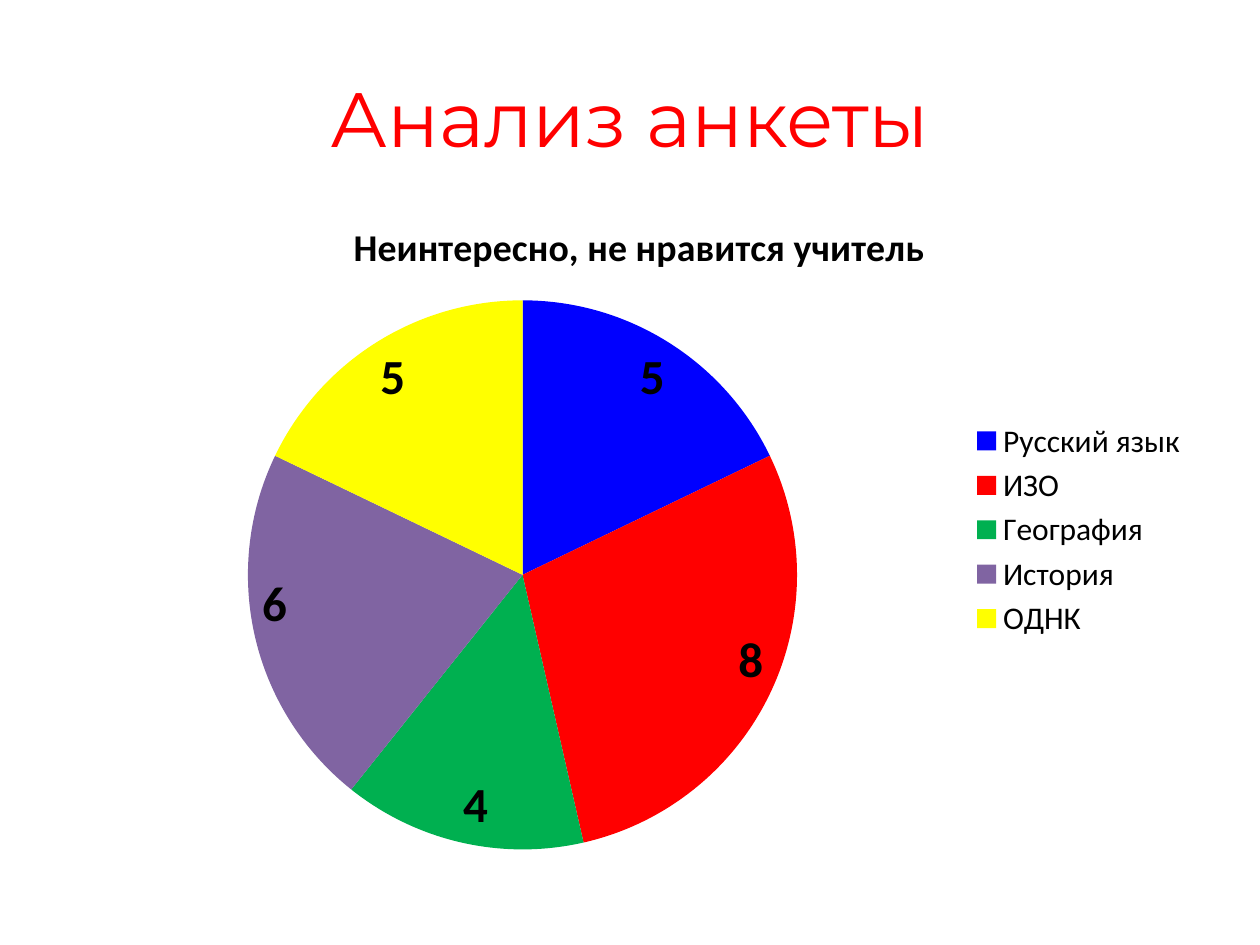
"""Build a slide with a pie chart of survey answers."""
from pptx import Presentation
from pptx.chart.data import CategoryChartData
from pptx.dml.color import RGBColor
from pptx.enum.chart import XL_CHART_TYPE, XL_LABEL_POSITION, XL_LEGEND_POSITION
from pptx.enum.text import MSO_ANCHOR, PP_ALIGN
from pptx.util import Inches, Pt

PIE = XL_CHART_TYPE.PIE
RIGHT = XL_LEGEND_POSITION.RIGHT
INSIDE = XL_LABEL_POSITION.INSIDE_END
MIDDLE = MSO_ANCHOR.MIDDLE
CENTER = PP_ALIGN.CENTER

COLORS = {
    "black": "000000",
    "blue": "0000FF",
    "red": "FF0000",
    "green": "00B050",
    "purple": "8064A2",
    "yellow": "FFFF00",
}
ANSWERS = [
    ("Русский язык", 5, "blue"),
    ("ИЗО", 8, "red"),
    ("География", 4, "green"),
    ("История", 6, "purple"),
    ("ОДНК", 5, "yellow"),
]
TOPIC = "Неинтересно, не нравится учитель"


def style(font, color, **values):
    font.color.rgb = RGBColor.from_string(COLORS[color])
    for name, value in values.items():
        setattr(font, name, value)


deck = Presentation()
deck.slide_width, deck.slide_height = Inches(10), Inches(7.5)
slide = deck.slides.add_slide(deck.slide_layouts[6])

box = slide.shapes.add_textbox(Inches(0.5), Inches(0.3), Inches(9), Inches(1.25))
frame = box.text_frame
frame.word_wrap = True
frame.vertical_anchor = MIDDLE
head = frame.paragraphs[0]
head.alignment = CENTER
run = head.add_run()
run.text = "Анализ анкеты"
style(run.font, "red", name="Montserrat", size=Pt(44))

data = CategoryChartData()
data.categories = [subject for subject, count, color in ANSWERS]
data.add_series(TOPIC, [count for subject, count, color in ANSWERS])
chart = slide.shapes.add_chart(
    PIE, Inches(0.62), Inches(1.53), Inches(8.91), Inches(5.35), data
).chart
style(chart.font, "black", name="Calibri", size=Pt(18))

chart.has_title = True
title = chart.chart_title
title.include_in_layout = False
title.text_frame.text = TOPIC
topic = title.text_frame.paragraphs[0].runs[0]
style(topic.font, "black", name="Calibri", size=Pt(21.6), bold=True)

chart.has_legend = True
chart.legend.position = RIGHT
chart.legend.include_in_layout = False
style(chart.legend.font, "black", name="Calibri", size=Pt(18))

plot = chart.plots[0]
plot.vary_by_categories = True
plot.has_data_labels = True
labels = plot.data_labels
labels.show_value = True
labels.show_percentage = False
labels.position = INSIDE
style(labels.font, "black", name="Calibri", size=Pt(28), bold=True)

for i, (subject, count, color) in enumerate(ANSWERS):
    fill = plot.series[0].points[i].format.fill
    fill.solid()
    fill.fore_color.rgb = RGBColor.from_string(COLORS[color])

deck.save("out.pptx")
